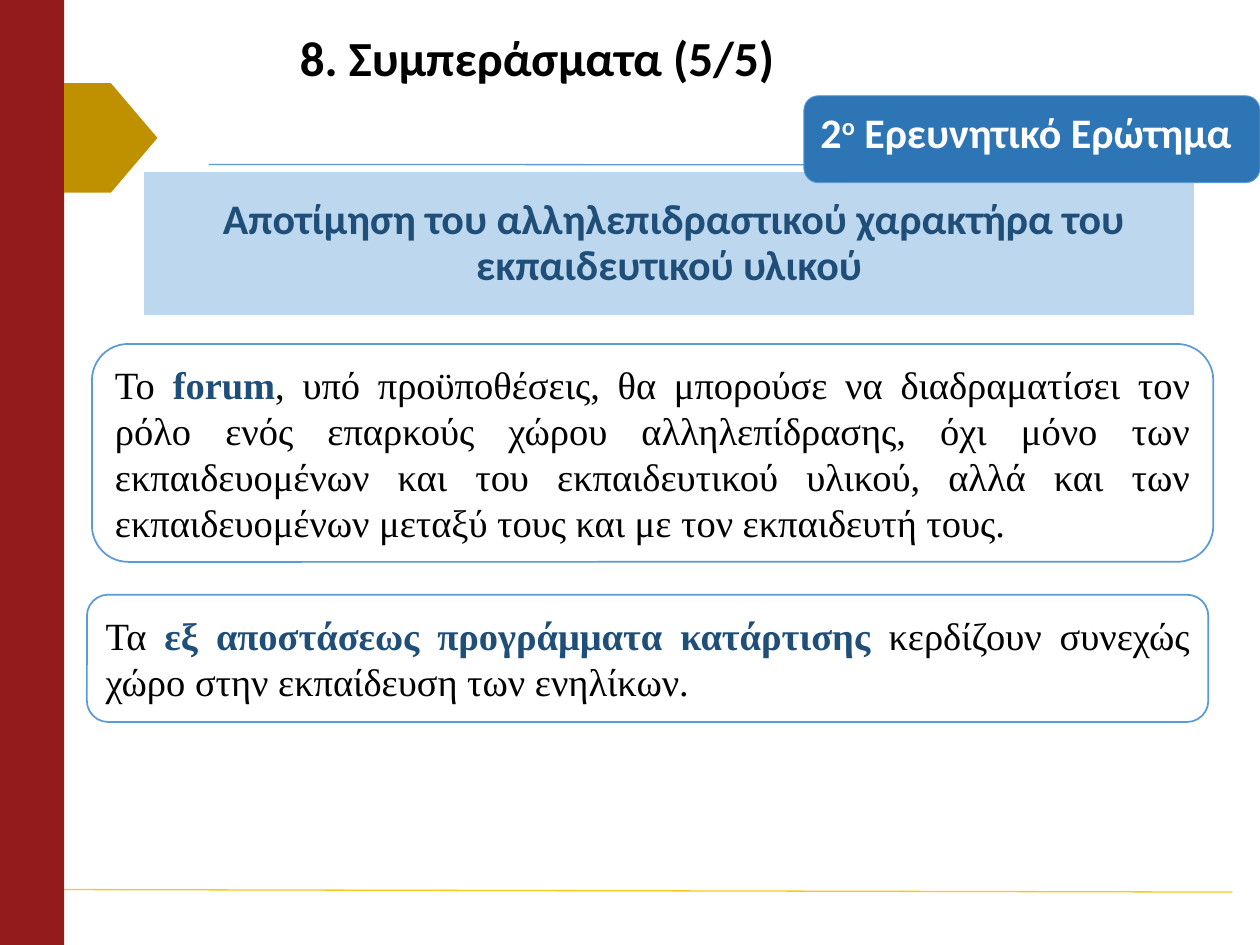
from dataclasses import dataclass, field
from pptx import Presentation, util as u
from pptx.dml.color import RGBColor
from pptx.enum import shapes, text
from pptx.oxml.ns import qn
from lxml import etree

COLORS = {
    "red": "931B1B", "gold": "BF9000", "yellow": "FFC61A", "white": "FFFFFF",
    "black": "000000", "sky": "5B9BD5", "pale": "BDD7EE", "navy": "1F4E79",
    "blue": "2E75B6",
}
COLS, ROWS = 100, 75
SERIF = "Times New Roman"
RECT = shapes.MSO_SHAPE.RECTANGLE
ROUND = shapes.MSO_SHAPE.ROUNDED_RECTANGLE
PENTAGON = shapes.MSO_SHAPE.PENTAGON
MIDDLE, TOP = text.MSO_ANCHOR.MIDDLE, text.MSO_ANCHOR.TOP
LEFT, CENTER, JUSTIFY = text.PP_ALIGN.LEFT, text.PP_ALIGN.CENTER, text.PP_ALIGN.JUSTIFY

prs = Presentation()
prs.slide_width, prs.slide_height = u.Inches(10), u.Inches(7.5)


@dataclass
class Run:
    text: str
    color: str = "black"
    bold: bool = False
    size: int = 22
    font: str = SERIF
    raised: bool = False


@dataclass
class Box:
    kind: int
    cell: tuple
    fill: str
    line: str = ""
    width: float = 1
    runs: list = field(default_factory=list)
    para: dict = field(default_factory=dict)
    frame: dict = field(default_factory=dict)


@dataclass
class Rule:
    start: tuple
    end: tuple
    color: str


def heading(words: str, color: str, size: int = 24, raised: bool = False) -> Run:
    return Run(words, color, True, size, "Calibri", raised)


def rgb(name: str) -> RGBColor:
    return RGBColor.from_string(COLORS[name])


def x(col: float) -> int:
    return round(prs.slide_width * col / COLS)


def y(row: float) -> int:
    return round(prs.slide_height * row / ROWS)


def set_all(obj, values: dict) -> None:
    for name, value in values.items():
        setattr(obj, name, value)


def place(sp, cell: tuple) -> None:
    left, top, width, height = cell
    set_all(sp, {"left": x(left), "top": y(top), "width": x(width), "height": y(height)})


def write(tf, runs: list, para: dict, frame: dict) -> None:
    set_all(tf, {"word_wrap": True, **frame})
    p = tf.paragraphs[0]
    set_all(p, para)
    for run in runs:
        r = p.add_run()
        r.text = run.text
        set_all(r.font, {"name": run.font, "size": u.Pt(run.size), "bold": run.bold})
        r.font.color.rgb = rgb(run.color)
        if run.raised:
            r.font._element.set("baseline", "30000")


def draw_box(s, box: Box) -> None:
    sp = s.shapes.add_shape(box.kind, 0, 0, 0, 0)
    place(sp, box.cell)
    sp.shadow.inherit = False
    sp.fill.solid()
    sp.fill.fore_color.rgb = rgb(box.fill)
    if box.line:
        sp.line.color.rgb = rgb(box.line)
        sp.line.width = u.Pt(box.width)
    else:
        sp.line.fill.background()
    if box.runs:
        write(sp.text_frame, box.runs, box.para, box.frame)


def draw_rule(s, rule: Rule) -> None:
    (x1, y1), (x2, y2) = rule.start, rule.end
    c = s.shapes.add_connector(shapes.MSO_CONNECTOR.STRAIGHT, x(x1), y(y1), x(x2), y(y2))
    c.line.color.rgb = rgb(rule.color)
    c.line.width = u.Pt(0.75)
    etree.SubElement(c._element.spPr, qn("a:effectLst"))


def statement(cell: tuple, *runs: Run) -> Box:
    return Box(ROUND, cell, "white", "sky", 1, list(runs),
               {"alignment": JUSTIFY}, {"vertical_anchor": MIDDLE})


BACKDROP = [
    Box(RECT, (0, 0, 5.1, 75), "red"),
    Box(PENTAGON, (5.1, 6.6, 7.4, 8.7), "gold"),
]
RULES = [
    Rule((16.6, 13.05), (93.6, 13.1), "sky"),
    Rule((5.1, 70.6), (97.8, 70.8), "yellow"),
]
TIGHT = {f"margin_{side}": u.Inches(0.02) for side in ("left", "top", "right", "bottom")}
CONTENT = [
    Box(RECT, (11.4, 13.6, 83.4, 11.5), "pale", "white", 1,
        [heading(" Αποτίμηση του αλληλεπιδραστικού χαρακτήρα του εκπαιδευτικού υλικού", "navy")],
        {"alignment": CENTER, "line_spacing": 0.9},
        {"vertical_anchor": MIDDLE, **TIGHT}),
    Box(ROUND, (63.8, 7.6, 36.2, 6.9), "blue", "sky", 0.5,
        [heading("2", "white"), heading("ο", "white", raised=True),
         heading(" Ερευνητικό Ερώτημα", "white")],
        {"alignment": LEFT}, {"vertical_anchor": TOP}),
    statement((7.3, 27.3, 89, 17.3), Run("Το "), Run("forum", "navy", True),
              Run(", υπό προϋποθέσεις, θα μπορούσε να διαδραματίσει τον ρόλο ενός "
                  "επαρκούς χώρου αλληλεπίδρασης, όχι μόνο των εκπαιδευομένων και του "
                  "εκπαιδευτικού υλικού, αλλά και των εκπαιδευομένων μεταξύ τους και με "
                  "τον εκπαιδευτή τους.")),
    statement((6.9, 47.2, 89, 10.1), Run("Τα "),
              Run("εξ αποστάσεως προγράμματα κατάρτισης ", "navy", True),
              Run("κερδίζουν συνεχώς χώρο στην εκπαίδευση των ενηλίκων. ")),
]


def main() -> None:
    s = prs.slides.add_slide(prs.slide_layouts[5])
    for box in BACKDROP:
        draw_box(s, box)
    for rule in RULES:
        draw_rule(s, rule)
    title = s.shapes.title
    place(title, (22.8, 3.7, 40.9, 6.3))
    write(title.text_frame, [heading("8. Συμπεράσματα (5/5)", "black", 28)],
          {"alignment": LEFT, "line_spacing": 0.9},
          {"vertical_anchor": MIDDLE, "auto_size": text.MSO_AUTO_SIZE.NONE,
           "margin_top": 0, "margin_bottom": u.Inches(0.4)})
    for box in CONTENT:
        draw_box(s, box)
    prs.save("out.pptx")


if __name__ == "__main__":
    main()
